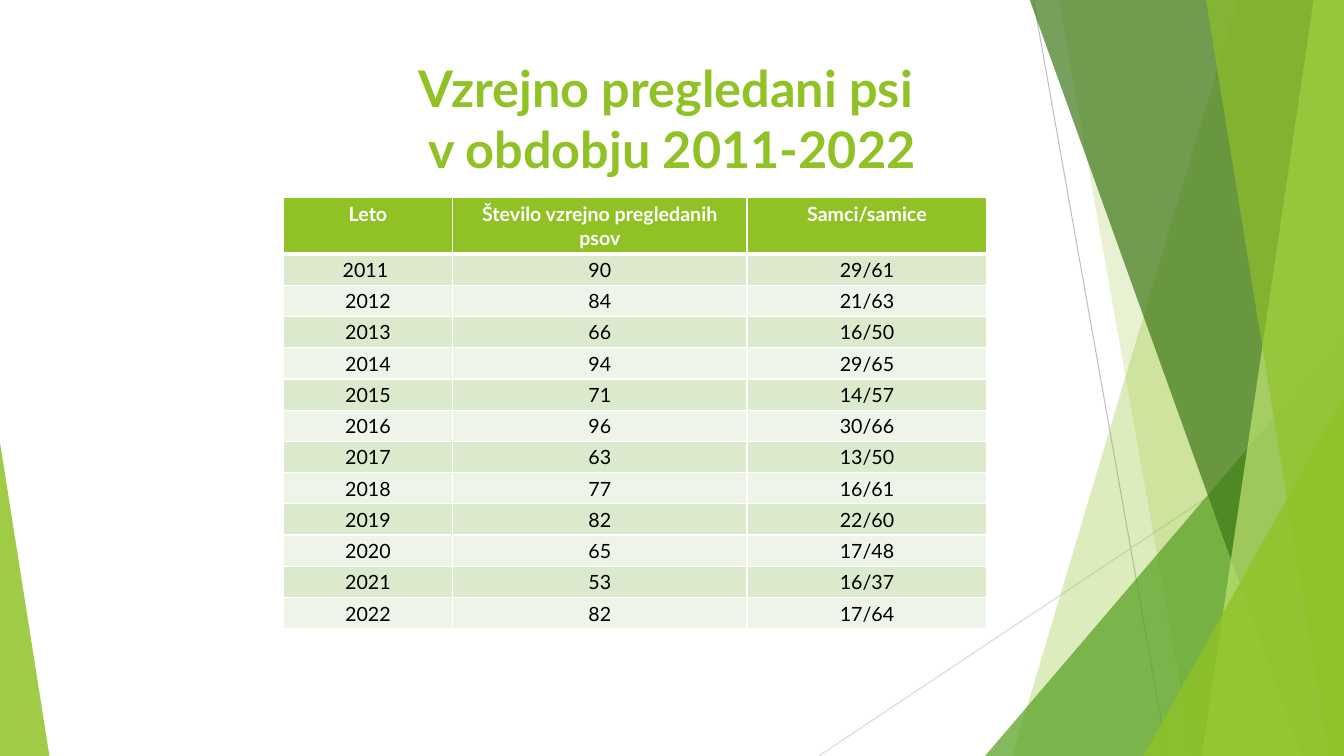
from pptx import Presentation
from pptx.dml.color import RGBColor
from pptx.enum.shapes import MSO_CONNECTOR, MSO_SHAPE
from pptx.enum.text import MSO_ANCHOR, MSO_AUTO_SIZE, PP_ALIGN
from pptx.oxml import parse_xml
from pptx.oxml.ns import nsdecls, qn
from pptx.util import Inches, Pt
from lxml.etree import SubElement

FONT = "Lato"
LIME = "90C226"
WHITE = "FFFFFF"
BLACK = "000000"
BANDS = ("DBE9CD", "EEF4E8")
WIDTH, HEIGHT, TOP = 13.33, 7.5, -0.01

HEADINGS = ("Leto", "Število vzrejno pregledanih psov", "Samci/samice")
DOGS_BY_YEAR = (
    ("2011 ", "90", "29/61"),
    ("2012", "84", "21/63"),
    ("2013", "66", "16/50"),
    ("2014", "94", "29/65"),
    ("2015", "71", "14/57"),
    ("2016", "96", "30/66"),
    ("2017", "63", "13/50"),
    ("2018", "77", "16/61"),
    ("2019", "82", "22/60"),
    ("2020", "65", "17/48"),
    ("2021", "53", "16/37"),
    ("2022", "82", "17/64"),
)


def rgb(color):
    return RGBColor.from_string(color)


def paint(shape, color, opacity):
    shape.shadow.inherit = False
    shape.fill.solid()
    shape.fill.fore_color.rgb = rgb(color)
    shape.line.fill.background()
    color_element = shape.fill._xPr.find(qn("a:solidFill"))[0]
    SubElement(color_element, qn("a:alpha"), val=str(opacity * 1000))


def add_ray(slide, start, end, color):
    ray = slide.shapes.add_connector(
        MSO_CONNECTOR.STRAIGHT, *(Inches(v) for v in (*start, *end))
    )
    ray.line.color.rgb = rgb(color)
    ray.line.width = Pt(0.75)
    SubElement(ray.element.spPr, qn("a:effectLst"))


def add_blade(slide, top_x, bottom_x, color, opacity):
    corners = [(WIDTH, TOP), (WIDTH, HEIGHT), (bottom_x, HEIGHT)]
    builder = slide.shapes.build_freeform(Inches(top_x), Inches(TOP))
    builder.add_line_segments([(Inches(x), Inches(y)) for x, y in corners])
    paint(builder.convert_to_shape(), color, opacity)


def add_corner(slide, left, top, width, peak, color, opacity):
    corner = slide.shapes.add_shape(
        MSO_SHAPE.ISOSCELES_TRIANGLE,
        Inches(left), Inches(top), Inches(width), Inches(HEIGHT - top),
    )
    corner.adjustments[0] = peak
    paint(corner, color, opacity)


def add_facets(slide):
    add_ray(slide, (10.25, 0), (11.58, HEIGHT), "BFBFBF")
    add_ray(slide, (WIDTH, 4.03), (8.12, HEIGHT), "D9D9D9")
    add_blade(slide, 12.28, 10.04, LIME, 30)
    add_blade(slide, 10.5, 11.83, LIME, 20)
    add_corner(slide, 9.77, 3.33, 3.56, 1, "54A021", 72)
    add_blade(slide, 10.21, 12.91, "3F7819", 70)
    add_blade(slide, 13.03, 11.92, "C0E474", 70)
    add_blade(slide, 11.96, 13.18, LIME, 65)
    add_corner(slide, 11.34, 3.93, 1.99, 1, LIME, 80)
    add_corner(slide, 0, 4.39, 0.49, 0, LIME, 85)


def add_text(paragraph, text, size, color, bold):
    run = paragraph.add_run()
    run.text = text
    run.font.name = FONT
    run.font.size = Pt(size)
    run.font.bold = bold
    run.font.color.rgb = rgb(color)


def set_title(slide, lines):
    title = slide.shapes.title
    title.left, title.top = Inches(1.79), Inches(0.52)
    title.width, title.height = Inches(9.75), Inches(1.4)
    title.element.getparent().append(title.element)
    frame = title.text_frame
    frame.word_wrap = True
    frame.auto_size = MSO_AUTO_SIZE.NONE
    frame.vertical_anchor = MSO_ANCHOR.TOP
    paragraph = frame.paragraphs[0]
    paragraph.alignment = PP_ALIGN.CENTER
    for index, line in enumerate(lines):
        if index:
            paragraph.add_line_break()
        add_text(paragraph, line, 36, LIME, True)


def set_borders(cell, top, bottom):
    properties = cell._tc.get_or_add_tcPr()
    for side, width in (("L", 1), ("R", 1), ("T", top), ("B", bottom)):
        properties.append(parse_xml(
            f'<a:ln{side} {nsdecls("a")} w="{Pt(width)}"><a:solidFill>'
            f'<a:srgbClr val="{WHITE}"/></a:solidFill></a:ln{side}>'
        ))


def fill_cell(cell, text, row):
    heading = row == 0
    set_borders(cell, 3 if row == 1 else 1, 3 if heading else 1)
    cell.fill.solid()
    cell.fill.fore_color.rgb = rgb(LIME if heading else BANDS[(row - 1) % 2])
    cell.margin_left = cell.margin_right = Inches(0.07)
    cell.margin_top = cell.margin_bottom = Inches(0.03)
    paragraph = cell.text_frame.paragraphs[0]
    paragraph.alignment = PP_ALIGN.CENTER
    paragraph.line_spacing = 1.05
    paragraph.space_after = Pt(8)
    add_text(paragraph, text, 14, WHITE if heading else BLACK, heading)


def add_dog_table(slide):
    rows = (HEADINGS, *DOGS_BY_YEAR)
    table = slide.shapes.add_table(
        len(rows), len(HEADINGS),
        Inches(2.81), Inches(1.96), Inches(6.98), Inches(4.28),
    ).table
    for column, width in zip(table.columns, (1.68, 2.92, 2.38)):
        column.width = Inches(width)
    for row, texts in enumerate(rows):
        table.rows[row].height = Inches(0.31 if row else 0.56)
        for column, text in enumerate(texts):
            fill_cell(table.cell(row, column), text, row)


def main():
    deck = Presentation()
    deck.slide_width, deck.slide_height = Inches(WIDTH), Inches(HEIGHT)
    slide = deck.slides.add_slide(deck.slide_layouts[5])
    add_facets(slide)
    set_title(slide, ("Vzrejno pregledani psi ", "v obdobju 2011-2022"))
    add_dog_table(slide)
    deck.save("out.pptx")


if __name__ == "__main__":
    main()
